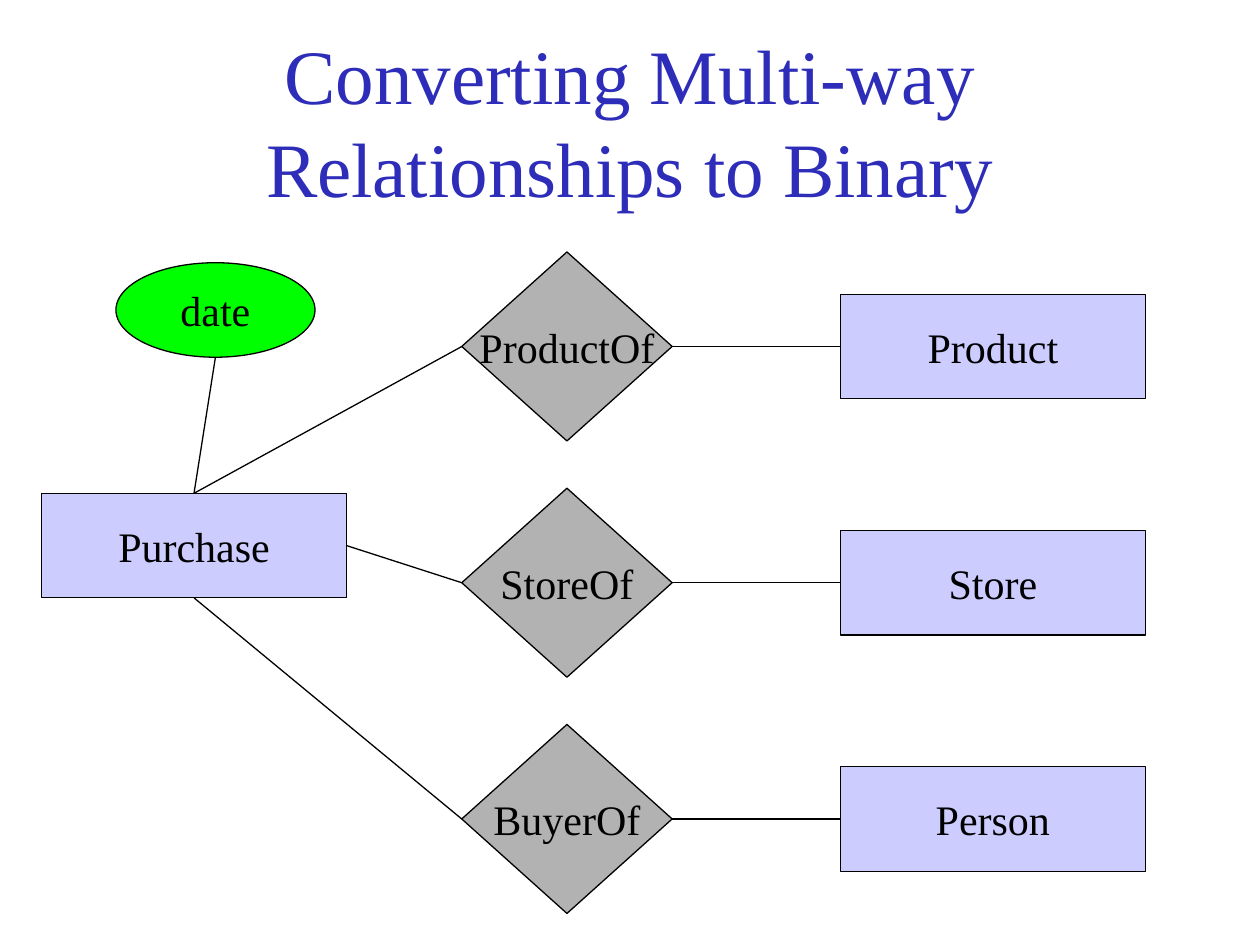
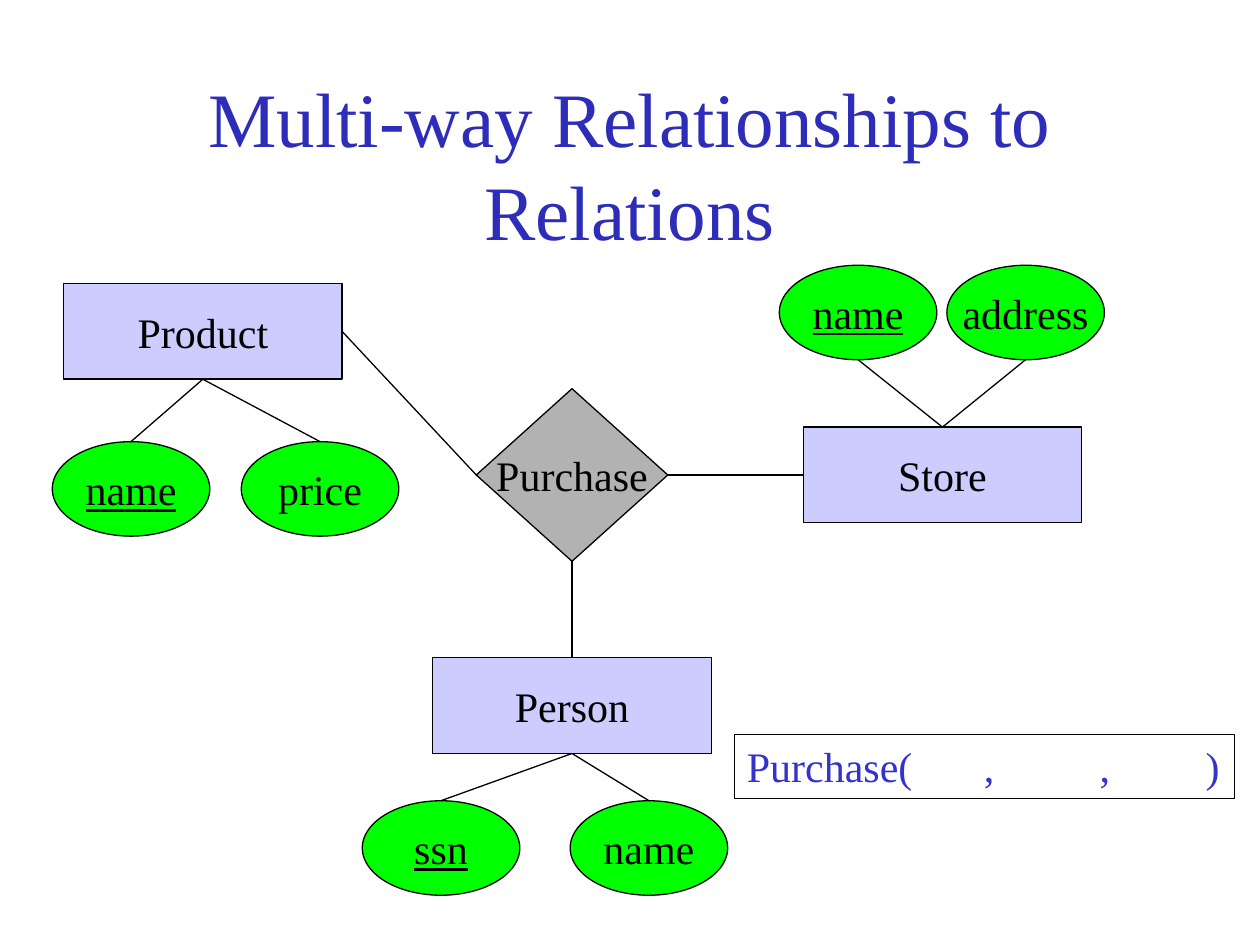
import pptx
import pptx.dml.color
import pptx.enum.shapes
import pptx.enum.text
import pptx.util
from lxml import etree
from pptx.util import Inches

RGBColor = pptx.dml.color.RGBColor
Shape = pptx.enum.shapes.MSO_SHAPE
Align = pptx.enum.text.PP_ALIGN
Anchor = pptx.enum.text.MSO_ANCHOR

BLACK = RGBColor(0x00, 0x00, 0x00)
TITLE_BLUE = RGBColor(0x2D, 0x2D, 0xB9)
SCHEMA_BLUE = RGBColor(0x33, 0x33, 0xCC)
KIND_STYLES = {
    "entity": (Shape.RECTANGLE, RGBColor(0xCC, 0xCC, 0xFF)),
    "relationship": (Shape.DIAMOND, RGBColor(0xB2, 0xB2, 0xB2)),
    "attribute": (Shape.OVAL, RGBColor(0x00, 0xFF, 0x00)),
}
FONT = "Times New Roman"
TOP, LEFT, BOTTOM, RIGHT = range(4)

# Binary relationships: (relationship, entity, side of Purchase it leaves from)
BINARY_TITLE = "Converting Multi-way Relationships to Binary"
BINARY_ROWS = [
    ("ProductOf", "Product", TOP),
    ("StoreOf", "Store", RIGHT),
    ("BuyerOf", "Person", BOTTOM),
]
BINARY_SIZES = {"entity": (2.42, 0.83), "relationship": (1.67, 1.5), "attribute": (1.58, 0.75)}
FIRST_ROW_Y, LAST_ROW_Y = 2.75, 6.5

# Multi-way relationship: (entity, centre, its side facing Purchase, side of Purchase,
# side with attributes, attribute centre y, [(attribute, centre x, is key)])
MULTIWAY_TITLE = "Multi-way Relationships to Relations"
MULTIWAY_ENTITIES = [
    ("Product", (1.61, 2.63), RIGHT, LEFT, BOTTOM, 3.88,
     [("name", 1.04, True), ("price", 2.54, False)]),
    ("Person", (4.54, 5.6), TOP, BOTTOM, BOTTOM, 6.73,
     [("ssn", 3.5, True), ("name", 5.15, False)]),
    ("Store", (7.48, 3.77), LEFT, RIGHT, TOP, 2.48,
     [("name", 6.81, True), ("address", 8.14, False)]),
]
MULTIWAY_SIZES = {"entity": (2.21, 0.76), "relationship": (1.52, 1.37), "attribute": (1.25, 0.75)}
SCHEMA_TEXT = "Purchase(\t,\t,\t)"
SCHEMA_TABS = (1.88, 2.8, 3.64)


def format_text(shape, size, color, alignment, underline=None):
    for paragraph in shape.text_frame.paragraphs:
        paragraph.alignment = alignment
        for run in paragraph.runs:
            run.font.name = FONT
            run.font.size = pptx.util.Pt(size)
            run.font.color.rgb = color
            run.font.underline = underline


def outline(shape):
    shape.line.color.rgb = BLACK
    shape.line.width = pptx.util.Pt(0.75)


def add_titled_slide(presentation, title_text, top):
    slide = presentation.slides.add_slide(presentation.slide_layouts[5])
    title = slide.shapes.title
    title.left, title.top = Inches(0.75), Inches(top)
    title.width, title.height = Inches(8.5), Inches(1.25)
    title.text_frame.text = title_text
    title.text_frame.auto_size = pptx.enum.text.MSO_AUTO_SIZE.NONE
    title.text_frame.vertical_anchor = Anchor.MIDDLE
    format_text(title, 44, TITLE_BLUE, Align.CENTER)
    return slide


def add_node(slide, kind, label, center, sizes, is_key=False):
    """Add an entity, relationship or attribute around its centre; keys are underlined."""
    geometry, fill_color = KIND_STYLES[kind]
    (x, y), (width, height) = center, sizes[kind]
    node = slide.shapes.add_shape(geometry, Inches(x - width / 2), Inches(y - height / 2),
                                  Inches(width), Inches(height))
    node.shadow.inherit = False
    node.fill.solid()
    node.fill.fore_color.rgb = fill_color
    outline(node)
    node.text_frame.text = label
    node.text_frame.word_wrap = False
    node.text_frame.vertical_anchor = Anchor.MIDDLE
    format_text(node, 24, BLACK, Align.CENTER, is_key or None)
    return node


def side_middle(node, side):
    x = {LEFT: 0, RIGHT: node.width}.get(side, node.width // 2)
    y = {TOP: 0, BOTTOM: node.height}.get(side, node.height // 2)
    return node.left + x, node.top + y


def link(slide, start, start_side, end, end_side):
    """Draw a line between two sides, joined except at ovals, whose sites are numbered otherwise."""
    line = slide.shapes.add_connector(pptx.enum.shapes.MSO_CONNECTOR.STRAIGHT,
                                      *side_middle(start, start_side), *side_middle(end, end_side))
    if start.auto_shape_type != Shape.OVAL:
        line.begin_connect(start, start_side)
    if end.auto_shape_type != Shape.OVAL:
        line.end_connect(end, end_side)
    outline(line)
    etree.SubElement(line._element.spPr, pptx.oxml.ns.qn("a:effectLst"))


def add_schema_box(slide):
    box = slide.shapes.add_textbox(Inches(5.83), Inches(5.83), Inches(3.97), Inches(0.51))
    outline(box)
    box.text_frame.text = SCHEMA_TEXT
    box.text_frame.word_wrap = True
    box.text_frame.margin_right = 0
    format_text(box, 24, SCHEMA_BLUE, Align.LEFT)
    properties = box.text_frame.paragraphs[0]._p.get_or_add_pPr()
    tab_list = etree.SubElement(properties, pptx.oxml.ns.qn("a:tabLst"))
    for position in SCHEMA_TABS:
        etree.SubElement(tab_list, pptx.oxml.ns.qn("a:tab"), pos=str(Inches(position)), algn="l")


def build_binary_slide(presentation):
    slide = add_titled_slide(presentation, BINARY_TITLE, 0.33)
    purchase = add_node(slide, "entity", "Purchase", (1.54, 4.33), BINARY_SIZES)
    date = add_node(slide, "attribute", "date", (1.71, 2.46), BINARY_SIZES)
    link(slide, date, BOTTOM, purchase, TOP)
    row_pitch = (LAST_ROW_Y - FIRST_ROW_Y) / (len(BINARY_ROWS) - 1)
    for row, (relationship_name, entity_name, purchase_side) in enumerate(BINARY_ROWS):
        y = FIRST_ROW_Y + row * row_pitch
        relationship = add_node(slide, "relationship", relationship_name, (4.5, y), BINARY_SIZES)
        entity = add_node(slide, "entity", entity_name, (7.88, y), BINARY_SIZES)
        link(slide, purchase, purchase_side, relationship, LEFT)
        link(slide, relationship, RIGHT, entity, LEFT)


def build_multiway_slide(presentation):
    slide = add_titled_slide(presentation, MULTIWAY_TITLE, 0.67)
    purchase = add_node(slide, "relationship", "Purchase", (4.54, 3.77), MULTIWAY_SIZES)
    for name, center, side, purchase_side, attribute_side, attribute_y, attributes in MULTIWAY_ENTITIES:
        entity = add_node(slide, "entity", name, center, MULTIWAY_SIZES)
        link(slide, entity, side, purchase, purchase_side)
        facing_side = TOP if attribute_side == BOTTOM else BOTTOM
        for label, x, is_key in attributes:
            attribute = add_node(slide, "attribute", label, (x, attribute_y), MULTIWAY_SIZES, is_key)
            link(slide, attribute, facing_side, entity, attribute_side)
    add_schema_box(slide)


def main():
    presentation = pptx.Presentation()
    presentation.slide_width, presentation.slide_height = Inches(10), Inches(7.5)
    build_binary_slide(presentation)
    build_multiway_slide(presentation)
    presentation.save("out.pptx")


if __name__ == "__main__":
    main()
